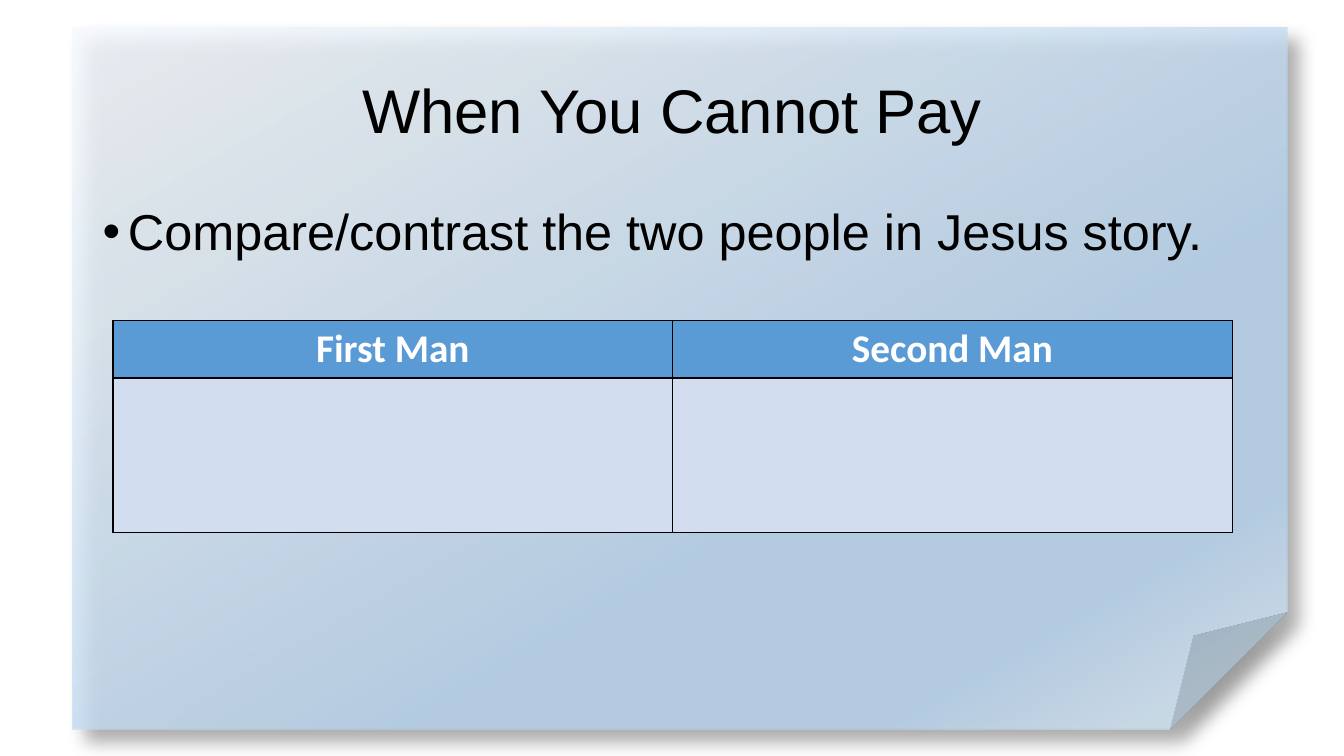
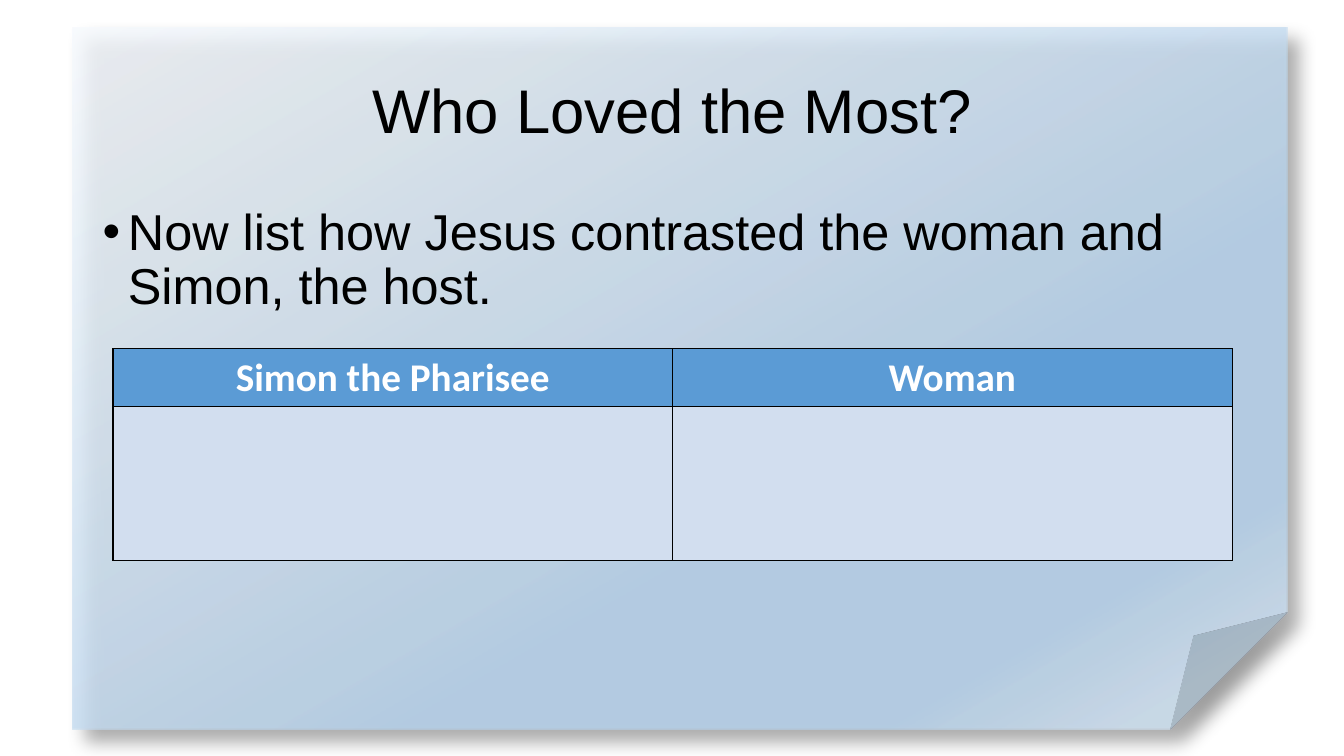
from lxml import etree
from pptx import Presentation, dml
from pptx.dml.color import RGBColor
from pptx.enum import shapes, text
from pptx.oxml import parse_xml
from pptx.oxml.ns import nsdecls, qn
from pptx.util import Inches, Pt

SLIDES = [
    {
        "title": "When You Cannot Pay",
        "task": "Compare/contrast the two people in Jesus story.",
        "people": ("First Man", "Second Man"),
        "table_top": 3.18,
    },
    {
        "title": "Who Loved the Most?",
        "task": "Now list how Jesus contrasted the woman and Simon, the host.",
        "people": ("Simon the Pharisee", "Woman"),
        "table_top": 3.46,
    },
]

BLACK, WHITE = "000000", "FFFFFF"
HEADER_FILL, ANSWER_FILL = "5B9BD5", "D2DEEF"
PAPER_STOPS = [(0, "F7FAFD"), (64, "B5D2EC"), (83, "B5D2EC"), (93, "CEE1F2")]
PAPER_OPACITY = 81

TEXT_LEFT, TEXT_WIDTH = 0.92, 11.5
TABLE_LEFT, TABLE_WIDTH = 1.12, 11.1
HEADER_HEIGHT, ANSWER_HEIGHT = 0.57, 1.53


def color(hex_code):
    return RGBColor.from_string(hex_code)


def style(paragraph, font_name, size, hex_code, bold=False):
    font = paragraph.font
    font.name, font.size, font.bold = font_name, Pt(size), bold
    font.color.rgb = color(hex_code)


def add_paper(slide):
    """Translucent gradient sheet with a folded corner and a soft shadow."""
    paper = slide.shapes.add_shape(
        shapes.MSO_SHAPE.FOLDED_CORNER,
        Inches(0.72), Inches(0.27), Inches(12.05), Inches(6.97))
    paper.line.fill.background()
    stops = "".join(
        f'<a:gs pos="{pos * 1000}"><a:srgbClr val="{hex_code}">'
        f'<a:alpha val="{PAPER_OPACITY * 1000}"/></a:srgbClr></a:gs>'
        for pos, hex_code in PAPER_STOPS)
    gradient = parse_xml(
        f'<a:gradFill {nsdecls("a")} rotWithShape="1"><a:gsLst>{stops}</a:gsLst>'
        f'<a:lin ang="{60 * 60000}" scaled="0"/></a:gradFill>')
    shadow = parse_xml(
        f'<a:effectLst {nsdecls("a")}><a:outerShdw blurRad="{Pt(13)}" '
        f'dist="{Pt(13)}" dir="{45 * 60000}" algn="tl" rotWithShape="0">'
        f'<a:srgbClr val="{BLACK}"><a:alpha val="40000"/></a:srgbClr>'
        '</a:outerShdw></a:effectLst>')
    properties = paper.element.spPr
    properties.find(qn("a:prstGeom")).addnext(gradient)
    properties.append(shadow)


def add_text(slide, content, top, height, size, anchor):
    box = slide.shapes.add_textbox(
        Inches(TEXT_LEFT), Inches(top), Inches(TEXT_WIDTH), Inches(height))
    frame = box.text_frame
    frame.word_wrap = True
    frame.vertical_anchor = anchor
    paragraph = frame.paragraphs[0]
    paragraph.text = content
    paragraph.line_spacing = 0.9
    return paragraph, size


def add_title(slide, content):
    title, size = add_text(slide, content, 0.4, 1.45, 44, text.MSO_ANCHOR.MIDDLE)
    title.alignment = text.PP_ALIGN.CENTER
    style(title, "Arial", size, BLACK)


def add_task(slide, content):
    task, size = add_text(slide, content, 2, 4.76, 36, text.MSO_ANCHOR.TOP)
    properties = task._p.get_or_add_pPr()
    properties.set("marL", str(Inches(0.25)))
    properties.set("indent", str(-Inches(0.25)))
    etree.SubElement(properties, qn("a:buFont")).set("typeface", "Arial")
    etree.SubElement(properties, qn("a:buChar")).set("char", "•")
    style(task, "Arial", size, BLACK)


def paint_cell(cell, fill):
    """Solid fill with a thin black border on every side."""
    properties = cell._tc.get_or_add_tcPr()
    for side in ("lnL", "lnR", "lnT", "lnB"):
        properties.append(parse_xml(
            f'<a:{side} {nsdecls("a")} w="{Pt(1)}"><a:solidFill>'
            f'<a:srgbClr val="{BLACK}"/></a:solidFill></a:{side}>'))
    cell.fill.solid()
    cell.fill.fore_color.rgb = color(fill)


def add_comparison(slide, people, top):
    table = slide.shapes.add_table(
        2, len(people), Inches(TABLE_LEFT), Inches(top),
        Inches(TABLE_WIDTH), Inches(HEADER_HEIGHT + ANSWER_HEIGHT)).table
    table.rows[0].height = Inches(HEADER_HEIGHT)
    table.rows[1].height = Inches(ANSWER_HEIGHT)
    for column, person in enumerate(people):
        header, answer = table.cell(0, column), table.cell(1, column)
        header.text = person
        heading = header.text_frame.paragraphs[0]
        heading.alignment = text.PP_ALIGN.CENTER
        style(heading, "Calibri", 28, WHITE, bold=True)
        paint_cell(header, HEADER_FILL)
        paint_cell(answer, ANSWER_FILL)


def main():
    deck = Presentation()
    deck.slide_width, deck.slide_height = Inches(13.33), Inches(7.5)
    for content in SLIDES:
        slide = deck.slides.add_slide(deck.slide_layouts[6])
        add_paper(slide)
        add_title(slide, content["title"])
        add_task(slide, content["task"])
        add_comparison(slide, content["people"], content["table_top"])
    deck.save("out.pptx")


if __name__ == "__main__":
    main()
